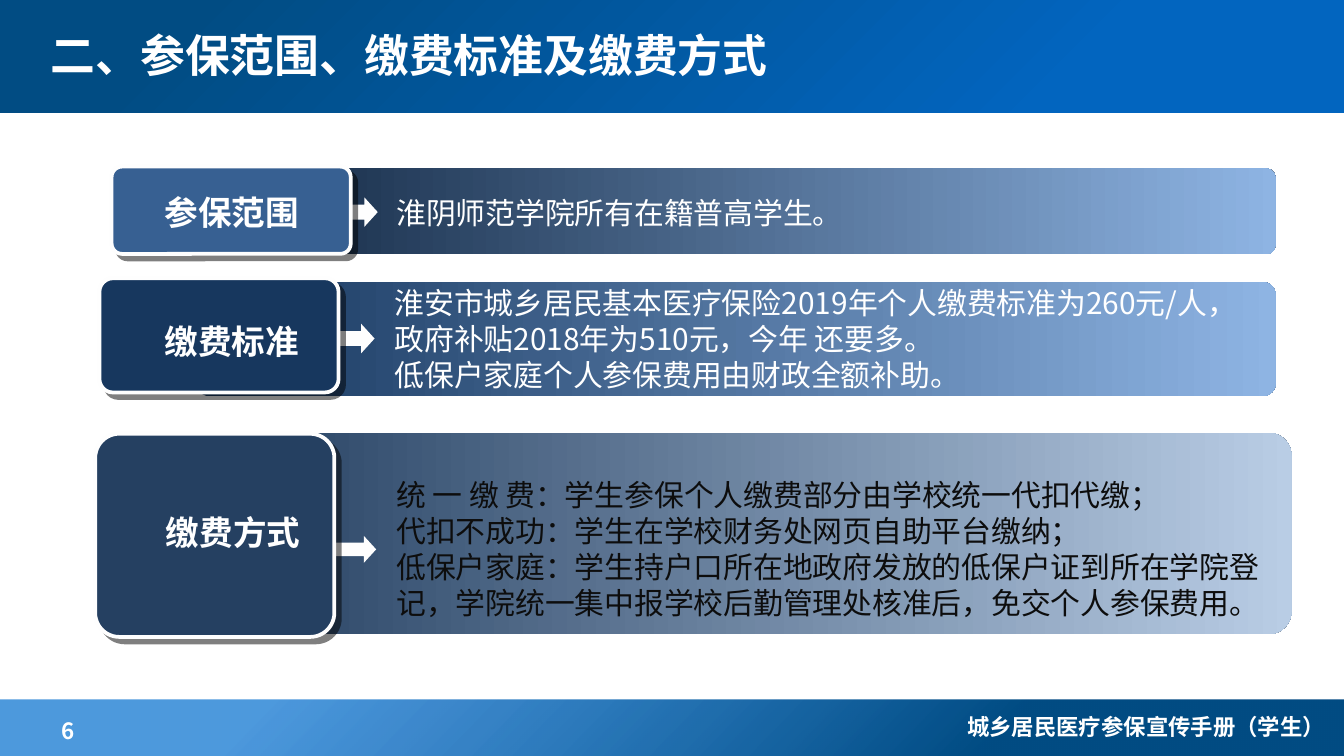
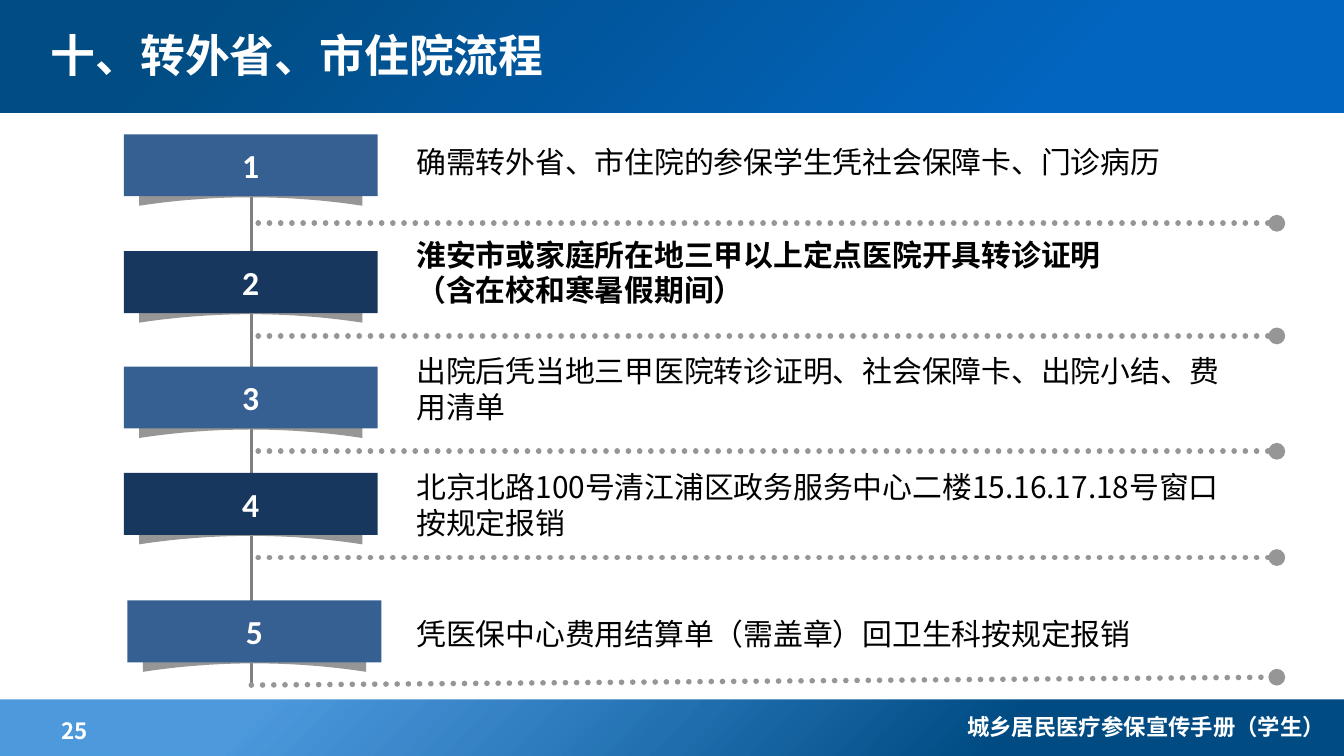
from dataclasses import dataclass
from typing import NamedTuple

from lxml import etree
from pptx import Presentation
from pptx import util as u
from pptx.dml.color import RGBColor
from pptx.enum import dml, shapes, text
from pptx.oxml import ns


@dataclass(frozen=True)
class Theme:
    deep: str = "014C83"
    sky: str = "026DCE"
    bright: str = "0265BF"
    steel: str = "376092"
    navy: str = "17375E"
    slate: str = "254061"
    midnight: str = "0F243E"
    light: str = "8EB4E3"
    pale: str = "B9CDE5"
    white: str = "FFFFFF"
    off_white: str = "FEFEFE"
    black: str = "000000"
    ink: str = "0D0D0D"
    grey: str = "969696"
    spine: str = "808080"
    title_font: str = "Times New Roman"
    number_font: str = "Calibri"
    body_font: str = "Noto Sans CJK SC"
    title_size: int = 24
    label_size: int = 18
    body_size: int = 16
    footer_size: int = 12


THEME = Theme()


class Box(NamedTuple):
    """An area in centimetres."""
    left: float
    top: float
    width: float
    height: float

    def inner(self, dx, dy, width, height):
        return Box(self.left + dx, self.top + dy, width, height)

    def lengths(self):
        return [u.Cm(value) for value in self]


PAGE = Box(0, 0, 25.4, 14.29)
FOOTER_TEXT = "城乡居民医疗参保宣传手册（学生）"
CIRCLE = '<a:path path="circle"><a:fillToRect l="100000" t="100000"/></a:path>'
LINEAR = '<a:lin ang="0" scaled="1"/>'


def rgb(colour):
    return RGBColor.from_string(colour)


def element(markup):
    """Parse one DrawingML element written with the a: prefix."""
    root = etree.fromstring(f'<root xmlns:a="{ns.nsuri("a")}">{markup}</root>')
    return root[0]


def write(shape, lines, size, colour, font=THEME.body_font, bold=False,
          align=None, anchor=text.MSO_ANCHOR.TOP, wrap=True):
    frame = shape.text_frame
    frame.word_wrap = wrap
    frame.vertical_anchor = anchor
    frame.text = "\n".join(lines)
    for para in frame.paragraphs:
        para.alignment = align
        para.font.size = u.Pt(size)
        para.font.bold = bold
        para.font.color.rgb = rgb(colour)
        para.font.name = font
        defaults = para._p.pPr.find(ns.qn("a:defRPr"))
        defaults.append(element(f'<a:ea typeface="{THEME.body_font}"/>'))


def add_text(page, box, lines, size, colour, **style):
    write(page.shapes.add_textbox(*box.lengths()), lines, size, colour, **style)


def add_block(canvas, kind, box, colour=None, adjust=()):
    block = canvas.shapes.add_shape(kind, *box.lengths())
    block.shadow.inherit = False
    block.line.fill.background()
    for index, value in enumerate(adjust):
        block.adjustments[index] = value
    if colour:
        block.fill.solid()
        block.fill.fore_color.rgb = rgb(colour)
    return block


def add_gradient(block, stops, direction):
    """Stops are (percent, colour, opacity percent)."""
    marks = "".join(
        f'<a:gs pos="{place * 1000}"><a:srgbClr val="{colour}">'
        f'<a:alpha val="{opacity * 1000}"/></a:srgbClr></a:gs>'
        for place, colour, opacity in stops)
    fill = element(f'<a:gradFill rotWithShape="1"><a:gsLst>{marks}</a:gsLst>'
                   f'{direction}</a:gradFill>')
    block._element.spPr.find(ns.qn("a:prstGeom")).addnext(fill)


def add_line(page, start, end, colour, width, dotted=False):
    line = page.shapes.add_connector(
        shapes.MSO_CONNECTOR.STRAIGHT, *[u.Cm(value) for value in (*start, *end)])
    line.line.color.rgb = rgb(colour)
    line.line.width = u.Pt(width)
    if dotted:
        line.line.dash_style = dml.MSO_LINE.ROUND_DOT
        outline = line._element.spPr.find(ns.qn("a:ln"))
        outline.set("cap", "rnd")
        outline.append(element('<a:tailEnd type="oval"/>'))
    line._element.spPr.append(element("<a:effectLst/>"))


def add_frame(deck, title, number):
    """Blank page with the title band and the footer band."""
    page = deck.slides.add_slide(deck.slide_layouts[6])
    rectangle = shapes.MSO_SHAPE.RECTANGLE
    # Footer band
    footer = PAGE.inner(0, 13.23, PAGE.width, 1.06)
    band = add_block(page, rectangle, footer)
    add_gradient(band, [(26, THEME.deep, 100), (80, THEME.sky, 70)], CIRCLE)
    add_text(page, footer.inner(0.91, 0.21, 3.9, 0.66), [str(number)],
             THEME.footer_size, THEME.white, bold=True)
    add_text(page, footer.inner(17.5, 0.13, 7.8, 0.66), [FOOTER_TEXT],
             THEME.footer_size, THEME.white, bold=True, align=text.PP_ALIGN.RIGHT)
    # Title band
    header = PAGE.inner(0, -0.08, 25.48, 2.21)
    band = add_block(page, rectangle, header)
    add_gradient(band, [(21, THEME.bright, 100), (86, THEME.deep, 100)], CIRCLE)
    add_text(page, header.inner(0.71, 0.21, 16.2, 1.8), [title], THEME.title_size,
             THEME.white, font=THEME.title_font, bold=True,
             anchor=text.MSO_ANCHOR.MIDDLE)
    return page


@dataclass
class Topic:
    """A gradient bar; the other areas are offsets from its corner."""
    label: str
    lines: list
    bar: Box
    bar_colours: tuple
    card: tuple
    card_colour: str
    arrow: tuple
    body: tuple
    label_offset: tuple
    ink: str = THEME.white


def add_topic(page, topic):
    rounded = shapes.MSO_SHAPE.ROUNDED_RECTANGLE
    # Bar and arrow
    bar = add_block(page, rounded, topic.bar, adjust=[0.115])
    start, end = topic.bar_colours
    add_gradient(bar, [(0, start, 100), (100, end, 100)], LINEAR)
    add_block(page, shapes.MSO_SHAPE.RIGHT_ARROW, topic.bar.inner(*topic.arrow),
              THEME.off_white, [0.5, 0.455])
    # Card with a hard shadow
    card = add_block(page, rounded, topic.bar.inner(*topic.card),
                     topic.card_colour, [0.119])
    card.line.color.rgb = rgb(THEME.off_white)
    card.line.width = u.Pt(2)
    card._element.spPr.find(ns.qn("a:effectLst")).append(element(
        f'<a:outerShdw dist="{u.Pt(4.2)}" dir="2700000" algn="ctr" rotWithShape="0">'
        f'<a:srgbClr val="{THEME.black}"><a:alpha val="50000"/></a:srgbClr>'
        '</a:outerShdw>'))
    # Wording
    add_text(page, topic.bar.inner(*topic.body), topic.lines,
             THEME.body_size, topic.ink)
    add_text(page, topic.bar.inner(*topic.label_offset, 4.65, 1.02), [topic.label],
             THEME.label_size, THEME.white, bold=True, align=text.PP_ALIGN.CENTER)


def add_plate(page, box, number, colour):
    """Numbered plate with a curled shadow below it."""
    group = page.shapes.add_group_shape()
    # Shadow: peaked top, parabolic lower edge
    half, middle = 2.11, box.left + box.width / 2
    outline = [(-1, 0.91), (0, 0.78), (1, 0.91)]
    outline += [(step / 10, 1.19 + 0.16 * (step / 10) ** 2)
                for step in range(10, -11, -1)]
    points = [(u.Cm(middle + half * x), u.Cm(box.top + y)) for x, y in outline]
    builder = group.shapes.build_freeform(*points[0])
    builder.add_line_segments(points[1:], close=True)
    curl = builder.convert_to_shape()
    curl.shadow.inherit = False
    curl.fill.solid()
    curl.fill.fore_color.rgb = rgb(THEME.grey)
    curl.line.fill.background()
    # Plate
    plate = add_block(group, shapes.MSO_SHAPE.RECTANGLE, box, colour)
    write(plate, [str(number)], THEME.label_size, THEME.white,
          font=THEME.number_font, bold=True, align=text.PP_ALIGN.CENTER,
          anchor=text.MSO_ANCHOR.MIDDLE, wrap=False)


@dataclass
class Step:
    top: float
    text_dy: float
    text_width: float
    lines: list
    bold: bool = False
    plate_dx: float = 0
    rule_start: tuple = (2.54, 1.6)
    rule_end_dy: float = 1.6


def add_step(page, box, number, step):
    colour = THEME.steel if number % 2 else THEME.navy
    add_plate(page, box.inner(step.plate_dx, 0, 4.8, 1.17), number, colour)
    # Dotted rule below the step
    dx, dy = step.rule_start
    add_line(page, (box.left + dx, box.top + dy),
             (box.left + box.width, box.top + step.rule_end_dy),
             THEME.grey, 3, dotted=True)
    add_text(page, box.inner(5.28, step.text_dy, step.text_width, 1.63), step.lines,
             THEME.body_size, THEME.black, bold=step.bold)


TOPICS = [
    Topic("参保范围", ["淮阴师范学院所有在籍普高学生。"],
          Box(3.71, 3.18, 20.4, 1.63), (THEME.midnight, THEME.light),
          card=(-1.6, -0.03, 4.52, 1.65), card_colour=THEME.steel,
          arrow=(2.39, 0.55, 1.04, 0.56), body=(3.53, 0.38, 10.92, 0.94),
          label_offset=(-1.65, 0.33)),
    Topic("缴费标准",
          ["淮安市城乡居民基本医疗保险2019年个人缴费标准为260元/人，"
           "政府补贴2018年为510元，今年 还要多。",
           "低保户家庭个人参保费用由财政全额补助。"],
          Box(3.71, 5.33, 20.4, 2.16), (THEME.navy, THEME.light),
          card=(-1.83, -0.07, 4.52, 2.16), card_colour=THEME.navy,
          arrow=(2.46, 0.79, 0.91, 0.56), body=(3.5, -0.07, 16.87, 3.68),
          label_offset=(-1.65, 0.61)),
    Topic("缴费方式",
          ["统 一 缴 费：学生参保个人缴费部分由学校统一代扣代缴；",
           "代扣不成功：学生在学校财务处网页自助平台缴纳；",
           "低保户家庭：学生持户口所在地政府发放的低保户证到所在学院登记，"
           "学院统一集中报学校后勤管理处核准后，免交个人参保费用。"],
          Box(4.14, 8.18, 20.27, 3.81), (THEME.slate, THEME.pale),
          card=(-2.34, 0.02, 4.52, 3.84), card_colour=THEME.slate,
          arrow=(1.93, 1.95, 1.04, 0.51), body=(3.1, 0.71, 17.25, 3),
          label_offset=(-2.06, 1.37), ink=THEME.ink),
]

STEPS = [
    Step(2.54, 0.05, 16.5, ["确需转外省、市住院的参保学生凭社会保障卡、门诊病历"],
         rule_start=(2.54, 1.68), rule_end_dy=1.68),
    Step(4.75, -0.41, 16.5, ["淮安市或家庭所在地三甲以上定点医院开具转诊证明",
                             "（含在校和寒暑假期间）"], bold=True),
    Step(6.93, -0.38, 16.08,
         ["出院后凭当地三甲医院转诊证明、社会保障卡、出院小结、费用清单"]),
    Step(8.94, -0.2, 15.67,
         ["北京北路100号清江浦区政务服务中心二楼15.16.17.18号窗口按规定报销"]),
    Step(11.35, 0.16, 16.08, ["凭医保中心费用结算单（需盖章）回卫生科按规定报销"],
         plate_dx=0.07, rule_start=(2.41, 1.6), rule_end_dy=1.45),
]


def add_topics_page(deck):
    page = add_frame(deck, "二、参保范围、缴费标准及缴费方式", 6)
    for topic in TOPICS:
        add_topic(page, topic)


def add_steps_page(deck):
    page = add_frame(deck, "十、转外省、市住院流程", 25)
    # Spine behind the plates
    add_line(page, (4.75, 3.58), (4.75, 12.95), THEME.spine, 1.5)
    for number, step in enumerate(STEPS, 1):
        add_step(page, Box(2.34, step.top, 21.79, 1.6), number, step)


def main():
    deck = Presentation()
    deck.slide_width, deck.slide_height = u.Cm(PAGE.width), u.Cm(PAGE.height)
    add_topics_page(deck)
    add_steps_page(deck)
    deck.save("out.pptx")


if __name__ == "__main__":
    main()
